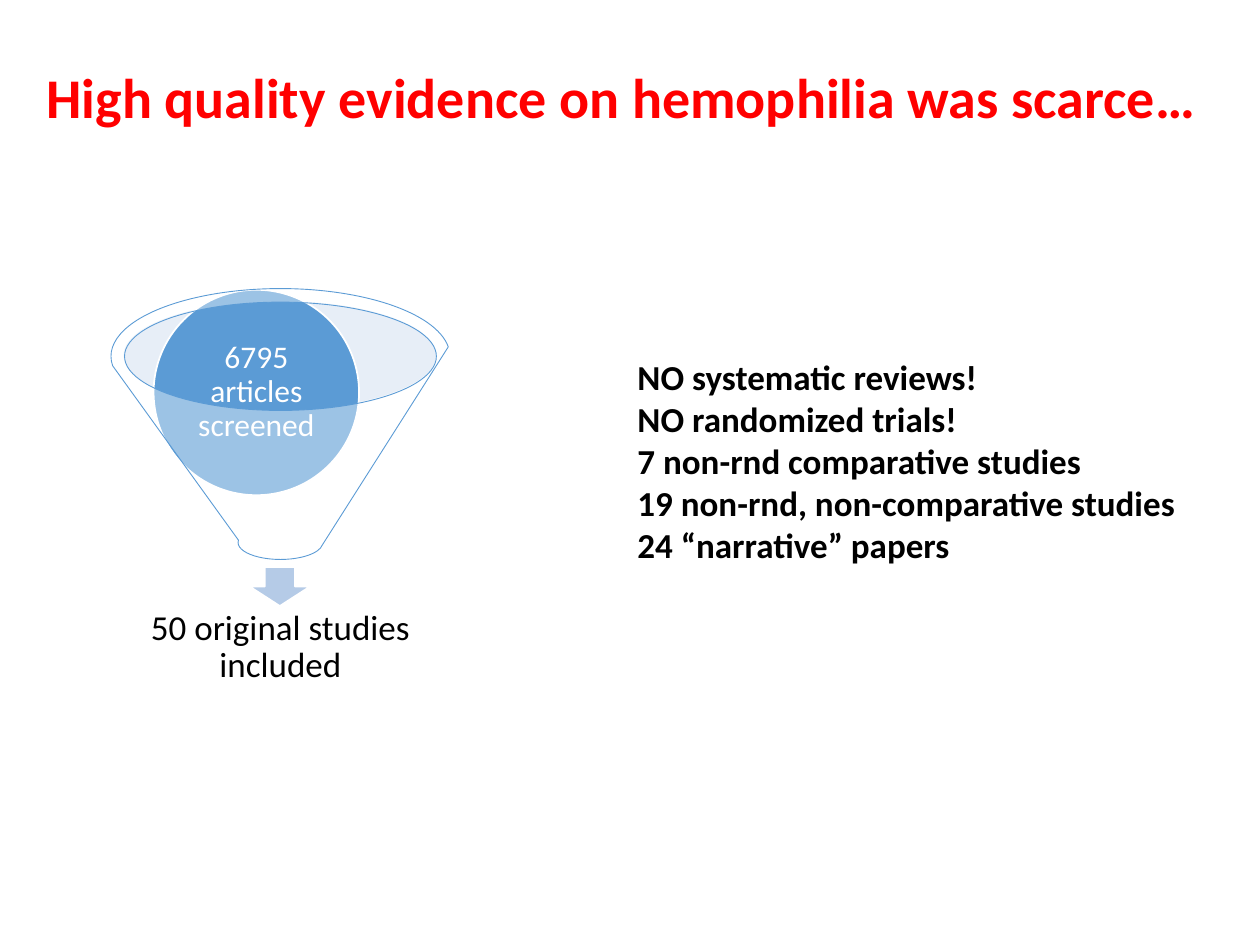
"""Builds a slide with a screening funnel and the list of evidence it yielded."""
import pptx
import pptx.dml.color
import pptx.enum.shapes
import pptx.enum.text
import pptx.oxml.ns
import pptx.util
from lxml import etree

Pt = pptx.util.Pt
SHAPE = pptx.enum.shapes.MSO_SHAPE
ALIGN = pptx.enum.text.PP_ALIGN
ANCHOR = pptx.enum.text.MSO_ANCHOR
THEME = {
    "font": "Calibri",
    "title": "FF0000", "text": "000000", "light": "FFFFFF",
    "accent": "5B9BD5", "arrow": "B5CBE7", "mouth": "C4D5EB",
    "title_size": 32, "body_size": 20, "circle_size": 18,
}


def add_part(kind, box, fill, line=None, line_width=1, opacity=100):
    part = slide.shapes.add_shape(kind, *map(Pt, box))
    part.shadow.inherit = False
    part.fill.solid()
    part.fill.fore_color.rgb = pptx.dml.color.RGBColor.from_string(THEME[fill])
    if opacity < 100:
        color = part.fill._xPr.find(".//" + pptx.oxml.ns.qn("a:srgbClr"))
        etree.SubElement(color, pptx.oxml.ns.qn("a:alpha"), val=str(opacity * 1000))
    if line:
        part.line.color.rgb = pptx.dml.color.RGBColor.from_string(THEME[line])
        part.line.width = Pt(line_width)
    else:
        part.line.fill.background()


def add_text(box, lines, size, color, insets, anchor, align=ALIGN.LEFT, spacing=1.0, bold=False):
    frame = slide.shapes.add_textbox(*map(Pt, box)).text_frame
    frame.word_wrap = True
    frame.vertical_anchor = anchor
    frame.margin_left = frame.margin_right = Pt(insets[0])
    frame.margin_top = frame.margin_bottom = Pt(insets[1])
    frame.text = "\n".join(lines)
    for paragraph in frame.paragraphs:
        paragraph.alignment = align
        paragraph.line_spacing = spacing
        paragraph.font.name = THEME["font"]
        paragraph.font.size = Pt(THEME[size])
        paragraph.font.bold = bold
        paragraph.font.color.rgb = pptx.dml.color.RGBColor.from_string(THEME[color])


presentation = pptx.Presentation()
presentation.slide_width, presentation.slide_height = Pt(720), Pt(540)
slide = presentation.slides.add_slide(presentation.slide_layouts[6])

add_text((19.5, 22.3, 676, 69.8), ["High quality evidence on hemophilia was scarce…"],
         "title_size", "title", (7.2, 3.6), ANCHOR.MIDDLE, spacing=0.9, bold=True)

add_part(SHAPE.OVAL, (70.6, 172.1, 178.6, 61.9), "mouth", opacity=40)
add_part(SHAPE.DOWN_ARROW, (142.6, 324, 34.6, 22.3), "arrow", "light")
add_text((59.8, 349.2, 200.9, 41.8), ["50 original studies included"],
         "body_size", "text", (11.5, 11.5), ANCHOR.MIDDLE, ALIGN.CENTER, 0.9)
add_part(SHAPE.OVAL, (87.8, 165.6, 117.4, 117.4), "accent", "light")
add_text((105.1, 182.9, 82.8, 82.8), ["6795 articles screened"],
         "circle_size", "light", (2.2, 2.2), ANCHOR.MIDDLE, ALIGN.CENTER, 0.9)
add_part(SHAPE.FUNNEL, (63.4, 164.9, 193.7, 154.8), "light", "accent", 0.5, opacity=40)

evidence = [
    "NO systematic reviews!",
    "NO randomized trials!",
    "7 non-rnd comparative studies",
    "19 non-rnd, non-comparative studies",
    "24 “narrative” papers",
]
add_text((364.3, 203, 333.4, 121), evidence,
         "body_size", "text", (0, 0), ANCHOR.TOP, bold=True)

presentation.save("out.pptx")
